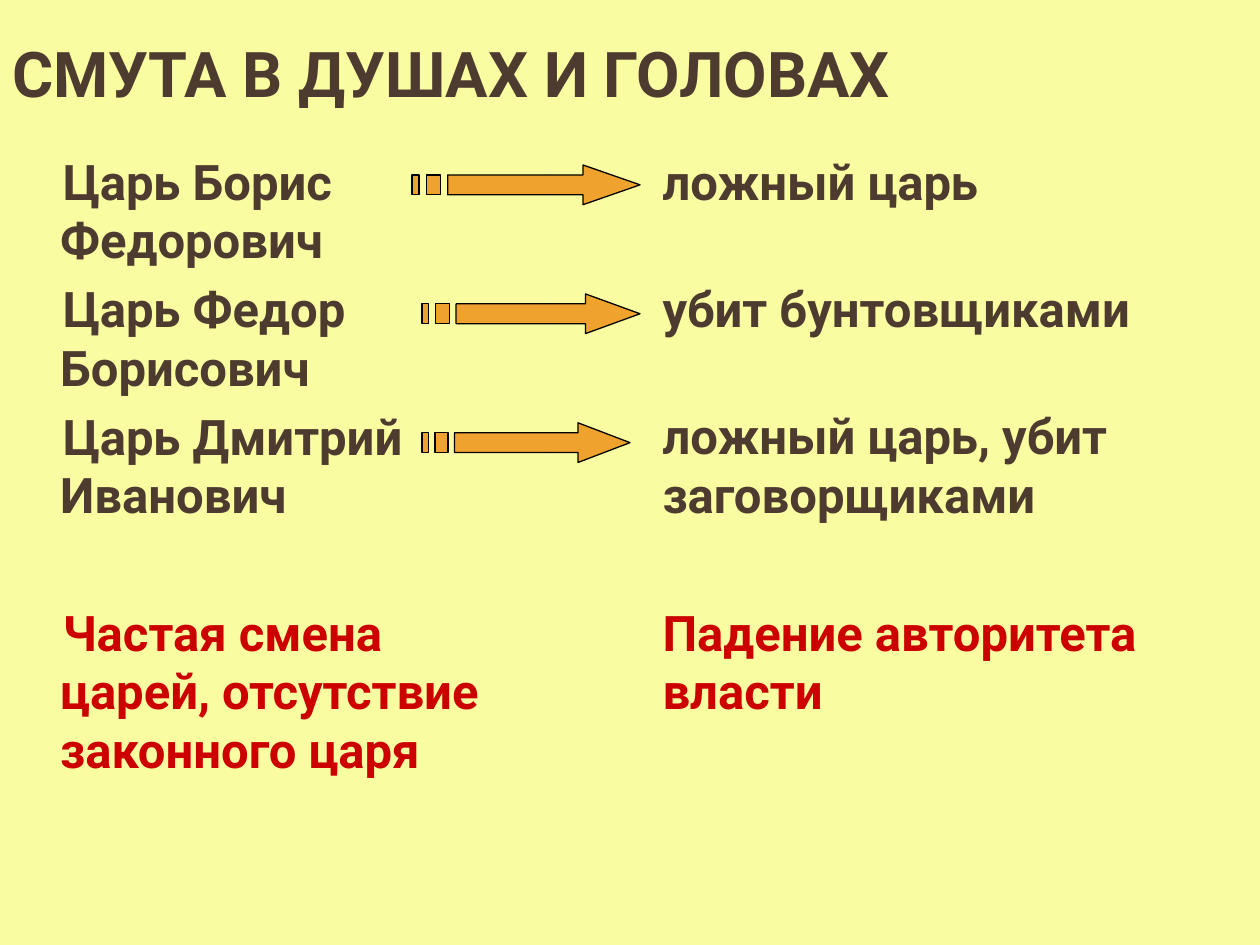
import dataclasses

import pptx
import pptx.dml.color
import pptx.enum.text
import pptx.util


@dataclasses.dataclass(frozen=True)
class Theme:
    font: str = "Roboto"
    paper: str = "FAFCA2"
    ink: str = "4E3B30"
    alert: str = "CC0000"
    arrow: str = "F0A22E"
    edge: str = "000000"
    head: int = 36
    body: int = 28


class Deck:
    """Draws filled text panels and striped arrows on a 100 by 75 grid."""

    def __init__(self, theme):
        self.theme = theme
        self.file = pptx.Presentation()
        self.file.slide_width = pptx.util.Inches(10)
        self.file.slide_height = pptx.util.Inches(7.5)
        self.unit = self.file.slide_width / 100
        self.slide = self.file.slides.add_slide(self.file.slide_layouts[6])

    def size(self, *cells):
        return [round(cell * self.unit) for cell in cells]

    def tint(self, fill, color):
        fill.solid()
        fill.fore_color.rgb = pptx.dml.color.RGBColor.from_string(color)

    def panel(self, area, items, size, left=0, first=0, middle=False):
        box = self.slide.shapes.add_textbox(*self.size(*area))
        self.tint(box.fill, self.theme.paper)
        frame = box.text_frame
        frame.word_wrap = True
        if middle:
            frame.vertical_anchor = pptx.enum.text.MSO_ANCHOR.MIDDLE
        for rank, (text, color, gap) in enumerate(items):
            para = frame.add_paragraph() if rank else frame.paragraphs[0]
            props = para._p.get_or_add_pPr()
            for key, cells in (("marL", left), ("indent", first)):
                props.set(key, str(round(cells * self.unit)))
            if rank:
                para.space_before = pptx.util.Pt(gap)
            run = para.add_run()
            run.text = text
            run.font.name = self.theme.font
            run.font.size = pptx.util.Pt(size)
            run.font.bold = True
            self.tint(run.font.fill, color)

    def arrow(self, left, top, width, height):
        def spot(x, y):
            return tuple(self.size(left + x * width, top + y * height))

        def bar(start, end):
            return [(start, 0.25), (start, 0.75), (end, 0.75), (end, 0.25)]

        start, end = 5 / 32, 0.75
        body = [(end, 0), (end, 0.25), (start, 0.25), (start, 0.75),
                (end, 0.75), (end, 1), (1, 0.5)]
        pen = self.slide.shapes.build_freeform(*spot(*body[0]))
        for rank, part in enumerate((body, bar(1 / 16, 1 / 8), bar(0, 1 / 32))):
            points = [spot(*point) for point in part]
            if rank:
                pen.move_to(*points[0])
            pen.add_line_segments(points[1:], close=True)
        shape = pen.convert_to_shape()
        shape.shadow.inherit = False
        self.tint(shape.fill, self.theme.arrow)
        self.tint(shape.line.fill, self.theme.edge)
        shape.line.width = pptx.util.Pt(0.75)


def main():
    theme = Theme()
    deck = Deck(theme)
    top, split = 11.5, 43.7
    near, far, last = 5.6, 39.2, 44.8
    tsars = [(name, theme.ink, near) for name in (
        "Царь Борис Федорович", "Царь Федор Борисович",
        "Царь Дмитрий Иванович")]
    fates = [(fate, theme.ink, far) for fate in (
        "ложный царь", "убит бунтовщиками",
        "ложный царь, убит заговорщиками")]
    tsars.append(("Частая смена царей, отсутствие законного царя",
                  theme.alert, last))
    fates.append(("Падение авторитета власти", theme.alert, last))

    deck.panel((0, 0, 100, top),
               [("СМУТА В ДУШАХ И ГОЛОВАХ", theme.ink, 0)],
               theme.head, middle=True)
    deck.panel((0, top, split, 75 - top), tsars, theme.body, 3.8, 0.2)
    deck.panel((split, top, 100 - split, 75 - top), fates, theme.body, 7.9)
    for row, (left, width) in enumerate(
            ((32.7, 18.1), (33.5, 17.3), (33.5, 16.5))):
        deck.arrow(left, 13.1 + row * 10.23, width, 3.15)
    deck.file.save("out.pptx")


if __name__ == "__main__":
    main()
